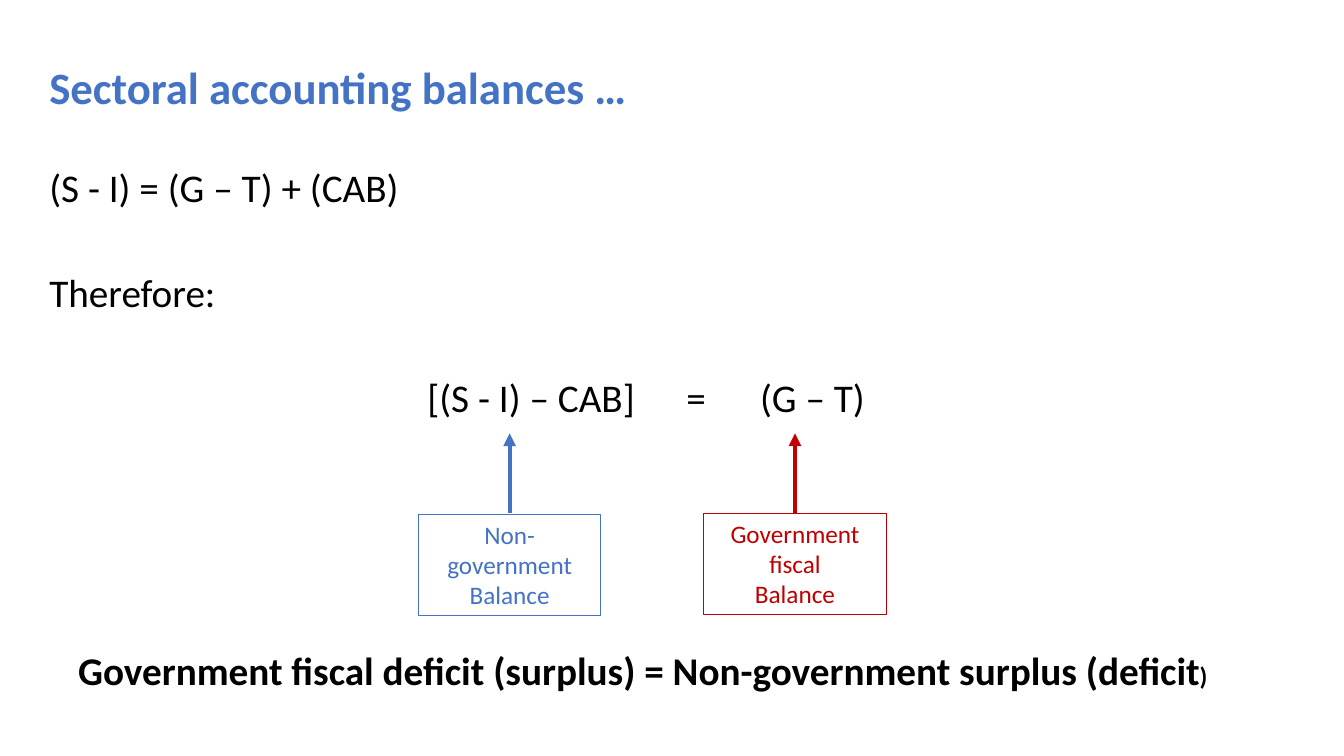
from lxml import etree
from pptx import Presentation
from pptx.dml.color import RGBColor
from pptx.enum.shapes import MSO_CONNECTOR, MSO_SHAPE
from pptx.enum.text import MSO_ANCHOR, PP_ALIGN
from pptx.oxml.ns import qn
from pptx.util import Inches, Pt

RECTANGLE = MSO_SHAPE.RECTANGLE
STRAIGHT = MSO_CONNECTOR.STRAIGHT
TOP, MIDDLE = MSO_ANCHOR.TOP, MSO_ANCHOR.MIDDLE
LEFT, CENTER = PP_ALIGN.LEFT, PP_ALIGN.CENTER

FONT = "Calibri"
BLACK, BLUE, RED = "000000", "4472C4", "C00000"

TITLE = "Sectoral accounting balances …"
EQUATIONS = [
    "(S - I) = (G – T) + (CAB)",
    "Therefore:",
    "\t[(S - I) – CAB]\t=\t(G – T)",
]
EQUATION_TABS = (3.75, 6.32, 7.05)
EQUATION_GAP = 45
# left, top, colour, lines
BALANCES = [
    (4.15, 5.10, BLUE, ["Non-government Balance"]),
    (6.98, 5.09, RED, ["Government fiscal", "Balance"]),
]
BALANCE_WIDTH, BALANCE_HEIGHT = 1.81, 1.01
ARROW_BOTTOM, ARROW_TOP = 5.09, 4.30
CONCLUSION = [
    ("Government fiscal deficit (surplus) = Non-government surplus (deficit", 28),
    (")", 18),
]


def colour(value):
    return RGBColor.from_string(value)


def add_span(para, text, size, ink, bold=False):
    span = para.add_run()
    span.text = text
    span.font.name = FONT
    span.font.size = Pt(size)
    span.font.bold = bold
    span.font.color.rgb = colour(ink)


def add_box(page, left, top, width, height, anchor=TOP):
    box = page.shapes.add_textbox(
        Inches(left), Inches(top), Inches(width), Inches(height))
    box.text_frame.word_wrap = True
    box.text_frame.vertical_anchor = anchor
    return box.text_frame


def add_lines(frame, lines, size, ink, align=LEFT, spacing=1.0, gap=0, bold=False):
    """Write one paragraph per line, with the gap before all but the first."""
    for index, line in enumerate(lines):
        para = frame.add_paragraph() if index else frame.paragraphs[0]
        para.alignment = align
        para.line_spacing = spacing
        para.space_before = Pt(gap if index else 0)
        add_span(para, line, size, ink, bold)


def set_tabs(para, stops):
    tabs = etree.SubElement(para._p.get_or_add_pPr(), qn("a:tabLst"))
    for stop in stops:
        etree.SubElement(tabs, qn("a:tab"), pos=str(Inches(stop)), algn="l")


def add_arrow(page, x, start, end, ink):
    arrow = page.shapes.add_connector(
        STRAIGHT, Inches(x), Inches(start), Inches(x), Inches(end))
    arrow.line.color.rgb = colour(ink)
    arrow.line.width = Pt(3)
    etree.SubElement(arrow.line._get_or_add_ln(), qn("a:tailEnd"), type="triangle")
    etree.SubElement(arrow._element.spPr, qn("a:effectLst"))


def add_balance(page, left, top, ink, lines):
    """Draw an outlined label with an arrow up to its term in the equation."""
    box = page.shapes.add_shape(
        RECTANGLE, Inches(left), Inches(top),
        Inches(BALANCE_WIDTH), Inches(BALANCE_HEIGHT))
    box.shadow.inherit = False
    box.fill.background()
    box.line.color.rgb = colour(ink)
    box.line.width = Pt(0.75)
    box.text_frame.word_wrap = True
    box.text_frame.vertical_anchor = TOP
    add_lines(box.text_frame, lines, 18, ink, CENTER)
    add_arrow(page, left + BALANCE_WIDTH / 2, ARROW_BOTTOM, ARROW_TOP, ink)


def main():
    deck = Presentation()
    deck.slide_width, deck.slide_height = Inches(13.33), Inches(7.5)
    page = deck.slides.add_slide(deck.slide_layouts[6])

    title = add_box(page, 0.39, 0.40, 12.72, 0.99, MIDDLE)
    add_lines(title, [TITLE], 32, BLUE, spacing=0.9, bold=True)

    body = add_box(page, 0.39, 1.62, 12.72, 2.65)
    add_lines(body, EQUATIONS, 28, BLACK, spacing=0.9, gap=EQUATION_GAP)
    set_tabs(body.paragraphs[-1], EQUATION_TABS)

    for balance in BALANCES:
        add_balance(page, *balance)

    conclusion = add_box(page, 0.39, 6.36, 11.97, 0.57).paragraphs[0]
    conclusion.alignment = CENTER
    for text, size in CONCLUSION:
        add_span(conclusion, text, size, BLACK, bold=True)

    deck.save("out.pptx")


if __name__ == "__main__":
    main()
